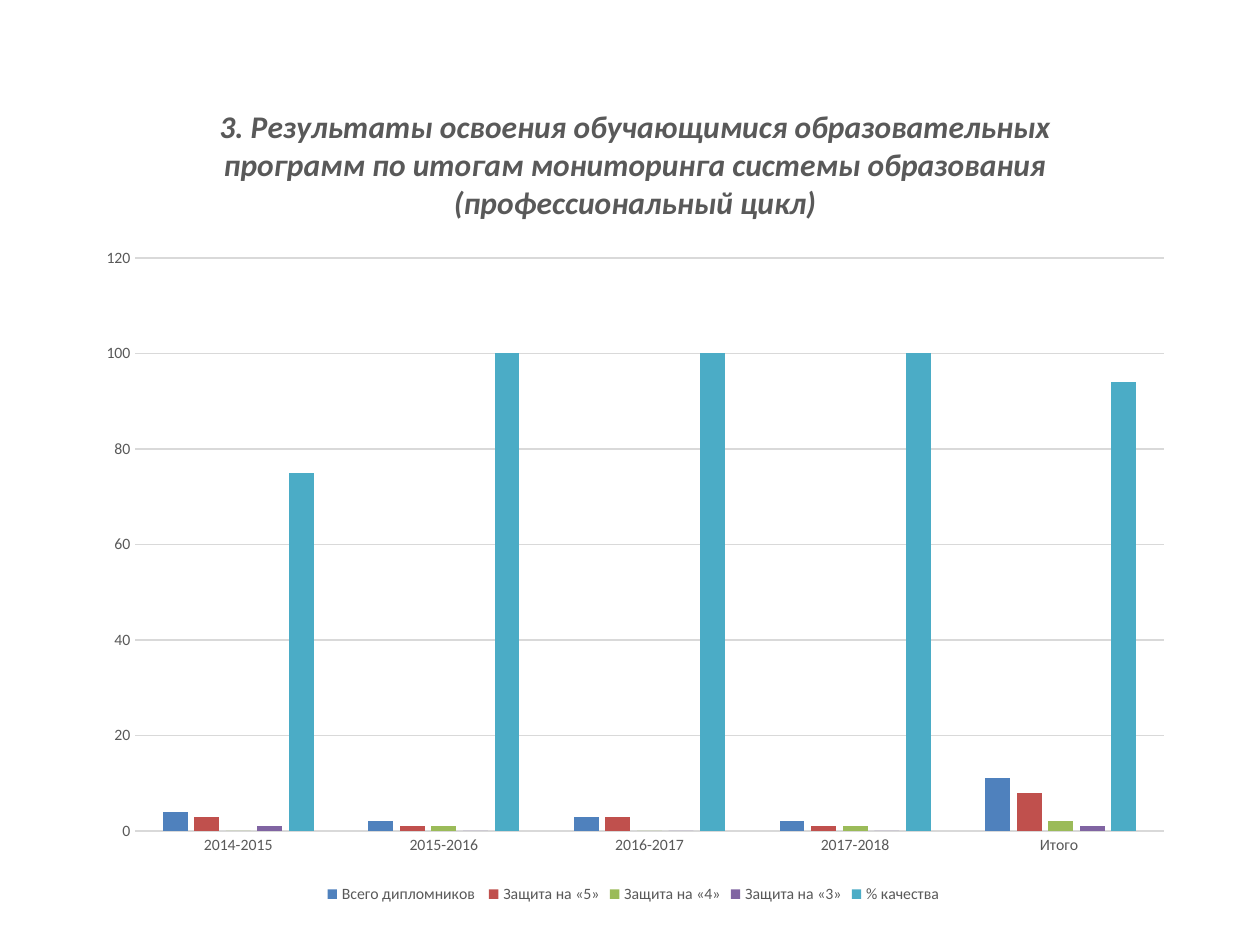
from pptx import Presentation
from pptx import util as u
from pptx.chart.data import CategoryChartData
from pptx.dml.color import RGBColor
from pptx.enum import chart as kinds

COLORS = {"text": "595959", "grid": "D9D9D9"}
TITLE = ("3. Результаты освоения обучающимися образовательных программ "
         "по итогам мониторинга системы образования (профессиональный цикл)")
YEARS = ["2014-2015", "2015-2016", "2016-2017", "2017-2018", "Итого "]
SERIES = [
    ("Всего дипломников ", (4, 2, 3, 2, 11), "4F81BD"),
    ("Защита на «5»", (3, 1, 3, 1, 8), "C0504D"),
    ("Защита на «4»", (0, 1, 0, 1, 2), "9BBB59"),
    ("Защита на «3»", (1, 0, 0, 0, 1), "8064A2"),
    ("% качества ", (75, 100, 100, 100, 94), "4BACC6"),
]


def format_font(font, size=9, bold=False, italic=False):
    font.name = "Calibri"
    font.size = u.Pt(size)
    font.bold = bold
    font.italic = italic
    font.color.rgb = RGBColor.from_string(COLORS["text"])


def format_line(line):
    line.width = u.Pt(0.75)
    line.color.rgb = RGBColor.from_string(COLORS["grid"])


deck = Presentation()
deck.slide_width, deck.slide_height = u.Inches(10), u.Inches(7.5)
page = deck.slides.add_slide(deck.slide_layouts[6])

# Chart and data
data = CategoryChartData()
data.categories = YEARS
for name, values, _ in SERIES:
    data.add_series(name, values)
chart = page.shapes.add_chart(
    kinds.XL_CHART_TYPE.COLUMN_CLUSTERED,
    u.Inches(0.67), u.Inches(0.6), u.Inches(8.74), u.Inches(6.61), data).chart
format_font(chart.font, size=10)

# Title
chart.has_title = True
chart.chart_title.include_in_layout = False
para = chart.chart_title.text_frame.paragraphs[0]
span = para.add_run()
span.text = TITLE
for font in (para.font, span.font):
    format_font(font, size=18, bold=True, italic=True)

# Columns
plot = chart.plots[0]
plot.gap_width = 219
plot.overlap = -27
plot.vary_by_categories = False
for series, (_, _, color) in zip(plot.series, SERIES):
    series.invert_if_negative = False
    series.format.fill.solid()
    series.format.fill.fore_color.rgb = RGBColor.from_string(color)

# Axes
for axis in (chart.category_axis, chart.value_axis):
    axis.major_tick_mark = axis.minor_tick_mark = kinds.XL_TICK_MARK.NONE
    format_font(axis.tick_labels.font)
format_line(chart.category_axis.format.line)
chart.value_axis.format.line.fill.background()
chart.value_axis.minimum_scale = 0
chart.value_axis.maximum_scale = 120
chart.value_axis.major_unit = 20
format_line(chart.value_axis.major_gridlines.format.line)

# Legend
chart.has_legend = True
chart.legend.position = kinds.XL_LEGEND_POSITION.BOTTOM
chart.legend.include_in_layout = False
format_font(chart.legend.font)

deck.save("out.pptx")
